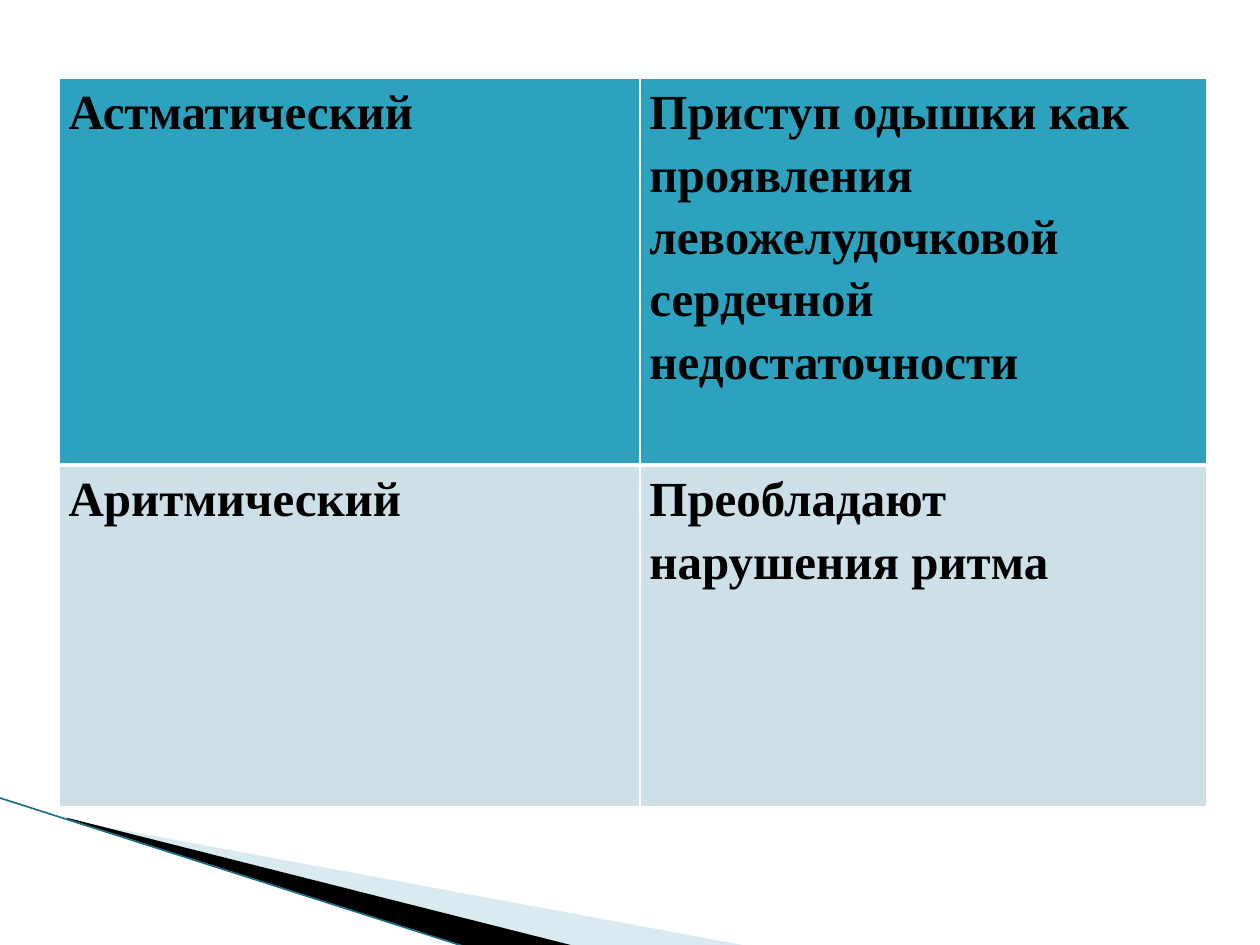
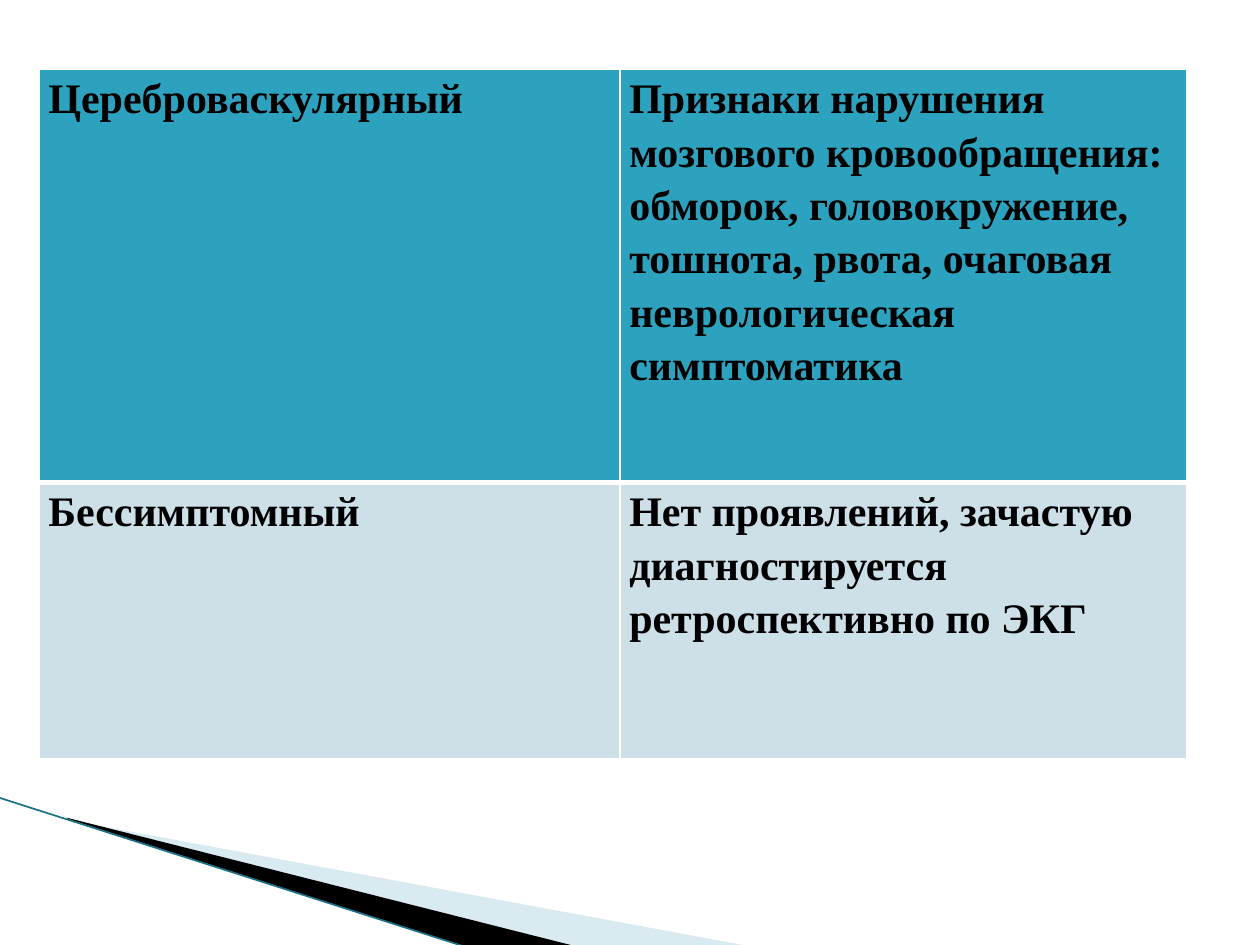
from lxml import etree
from pptx import Presentation, util as u
from pptx.dml.color import RGBColor
from pptx.enum import shapes
from pptx.oxml.ns import qn

# left, top, text size, row heights, rows of text
PAGES = [
    (0.47, 0.62, 28, (3.07, 2.71), [
        ("Астматический",
         "Приступ одышки как проявления левожелудочковой сердечной недостаточности"),
        ("Аритмический", "Преобладают нарушения ритма"),
    ]),
    (0.31, 0.55, 24, (3.28, 2.19), [
        ("Цереброваскулярный",
         "Признаки нарушения мозгового кровообращения: обморок, головокружение, "
         "тошнота, рвота, очаговая неврологическая симптоматика"),
        ("Бессимптомный",
         "Нет проявлений, зачастую диагностируется ретроспективно по ЭКГ"),
    ]),
]
COLS = (4.61, 4.5)
FILLS = ("2DA2BF", "CDE0E8")
RULES = ({"L": 1, "R": 1, "T": 1, "B": 3}, {"L": 1, "R": 1, "T": 3, "B": 1})
FONT, INK, WHITE = "Times New Roman", "000000", "FFFFFF"

# Corner wedges in hundredths of an inch: frame, points, colour, opacity in percent
WEDGES = [
    ((78, 547, 416, 158),
     [(55, 651), (595, 751), (456, 751), (55, 650)], "A0CBDC", 40),
    ((-6, 633, 416, 92),
     [(53, 649), (457, 751), (372, 752), (54, 650)], INK, 100),
]
EDGE = (-0.01, 6.33, 3.71, 7.52)
EDGE_INK = "1B6F86"


def rgb(code):
    return RGBColor.from_string(code)


def set_frame(shape, frame, points):
    """Give the outline its own frame, keeping its points where they are."""
    left, top, width, height = frame
    shape.left, shape.top, shape.width, shape.height = (
        u.Inches(n / 100) for n in frame)
    path = shape._element.find(".//" + qn("a:path"))
    path.set("w", str(width))
    path.set("h", str(height))
    for spot, (x, y) in zip(path.iter(qn("a:pt")), points):
        spot.set("x", str(x - left))
        spot.set("y", str(y - top))


def add_wedge(slide, frame, points, color, alpha):
    path = slide.shapes.build_freeform(*points[0], scale=u.Inches(0.01))
    path.add_line_segments(points[1:])
    wedge = path.convert_to_shape()
    set_frame(wedge, frame, points + points[:1])
    wedge.shadow.inherit = False
    wedge.line.fill.background()
    wedge.fill.solid()
    wedge.fill.fore_color.rgb = rgb(color)
    if alpha < 100:
        tint = wedge.fill._xPr.find(".//" + qn("a:srgbClr"))
        etree.SubElement(tint, qn("a:alpha"), val=str(alpha * 1000))


def add_decor(slide):
    for wedge in WEDGES:
        add_wedge(slide, *wedge)
    edge = slide.shapes.add_connector(
        shapes.MSO_CONNECTOR.STRAIGHT, *map(u.Inches, EDGE))
    edge.line.color.rgb = rgb(EDGE_INK)
    edge.line.width = u.Pt(0.95)
    etree.SubElement(edge._element.spPr, qn("a:effectLst"))


def set_rules(cell, rules):
    """Draw the cell borders; call before the cell is filled."""
    props = cell._tc.get_or_add_tcPr()
    for side, width in rules.items():
        line = etree.SubElement(props, qn("a:ln" + side), w=str(u.Pt(width)))
        fill = etree.SubElement(line, qn("a:solidFill"))
        etree.SubElement(fill, qn("a:srgbClr"), val=WHITE)


def set_cell(cell, words, size, color, rules):
    set_rules(cell, rules)
    cell.fill.solid()
    cell.fill.fore_color.rgb = rgb(color)
    cell.margin_left = cell.margin_right = u.Pt(5.4)
    cell.margin_top = cell.margin_bottom = 0
    para = cell.text_frame.paragraphs[0]
    para.text = words
    para.line_spacing = 1.15
    para.space_after = u.Pt(12)
    font = para.runs[0].font
    font.name, font.size, font.bold = FONT, u.Pt(size), True
    font.color.rgb = rgb(INK)


def add_grid(slide, left, top, size, heights, rows):
    box = map(u.Inches, (left, top, sum(COLS), sum(heights)))
    table = slide.shapes.add_table(len(rows), len(COLS), *box).table
    for col, width in zip(table.columns, COLS):
        col.width = u.Inches(width)
    for r, (row, height) in enumerate(zip(rows, heights)):
        table.rows[r].height = u.Inches(height)
        for c, words in enumerate(row):
            set_cell(table.cell(r, c), words, size, FILLS[r], RULES[r])


def main():
    deck = Presentation()
    deck.slide_width, deck.slide_height = u.Inches(10), u.Inches(7.5)
    for page in PAGES:
        slide = deck.slides.add_slide(deck.slide_layouts[6])
        add_decor(slide)
        add_grid(slide, *page)
    deck.save("out.pptx")


if __name__ == "__main__":
    main()
